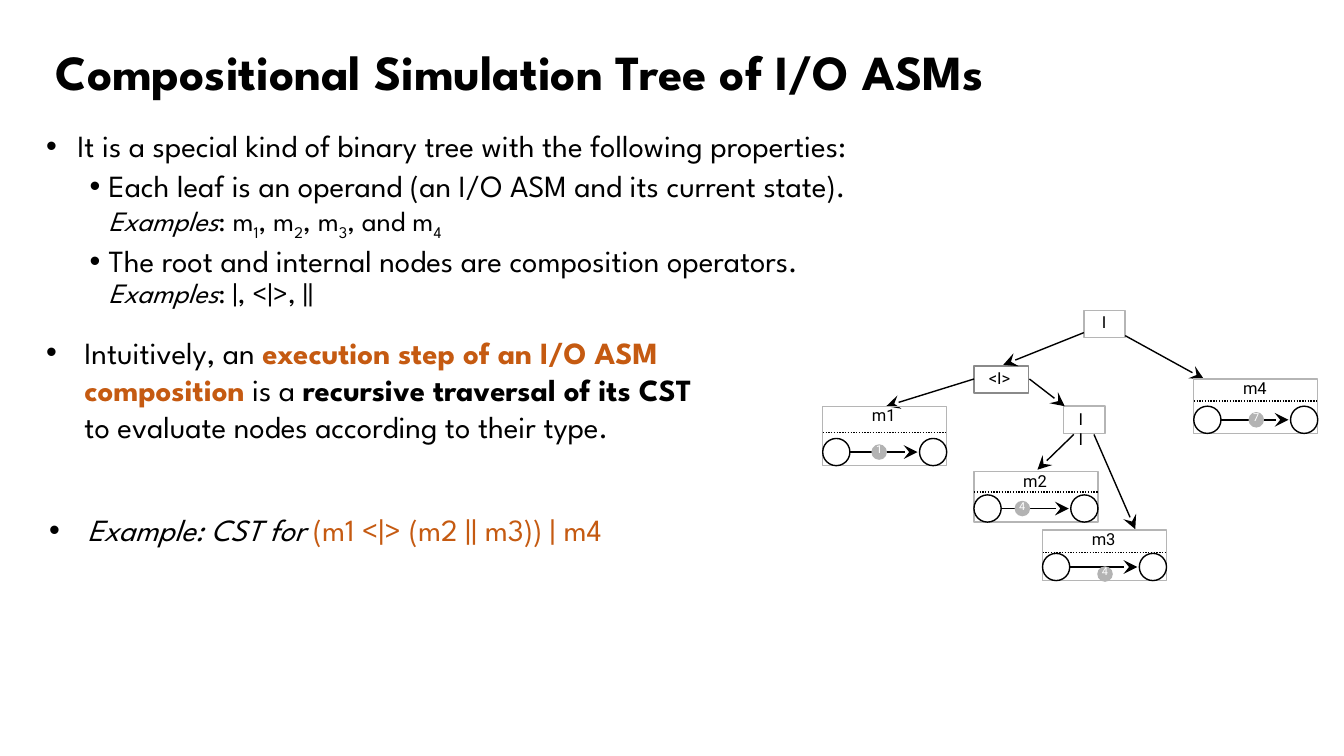
from lxml import etree
from pptx import Presentation
from pptx import util as u
from pptx.dml.color import RGBColor
from pptx.enum import dml, shapes, text
from pptx.oxml.ns import qn

COLORS = {"ink": "000000", "accent": "C55A11", "paper": "FFFFFF",
          "frame": "B5B5B5", "dark_frame": "8A8A8A", "badge": "B3B3B3"}

deck = Presentation()
deck.slide_width, deck.slide_height = u.Inches(13.33), u.Inches(7.5)
slide = deck.slides.add_slide(deck.slide_layouts[5])


def place_shape(preset, left, top, width, height, line, fill=None):
    shape = slide.shapes.add_shape(preset, *map(u.Inches, (left, top, width, height)))
    shape.shadow.inherit = False
    shape.line.color.rgb = RGBColor.from_string(COLORS[line])
    shape.line.width = u.Pt(1)
    if fill:
        shape.fill.solid()
        shape.fill.fore_color.rgb = RGBColor.from_string(COLORS[fill])
    else:
        shape.fill.background()


def draw_line(x1, y1, x2, y2, dotted=False):
    line = slide.shapes.add_connector(shapes.MSO_CONNECTOR.STRAIGHT,
                                      *map(u.Inches, (x1, y1, x2, y2)))
    line.line.color.rgb = RGBColor.from_string(COLORS["ink"])
    line.line.width = u.Pt(1)
    if dotted:
        line.line.dash_style = dml.MSO_LINE.ROUND_DOT
    else:
        etree.SubElement(line.line._get_or_add_ln(), qn("a:tailEnd"),
                         type="stealth", w="lg", len="lg")
    etree.SubElement(line._element.spPr, qn("a:effectLst"))


# Title
title = slide.shapes.title
title.left, title.top, title.width, title.height = map(u.Inches, (0.45, 0.43, 11.65, 1.09))
title.text_frame.text = "Compositional Simulation Tree of I/O ASMs"
title.text_frame.vertical_anchor = text.MSO_ANCHOR.TOP
heading = title.text_frame.paragraphs[0]
heading.alignment = text.PP_ALIGN.LEFT
heading.line_spacing = 0.9
heading.font.name, heading.font.size, heading.font.bold = "League Spartan", u.Pt(35), True
heading.font.color.rgb = RGBColor.from_string(COLORS["ink"])

# Bullet blocks: box, line spacing, paragraphs of (margin, indent, space before, runs)
# Run styles: i italic, b bold, a accent, s small, _ subscript
leaf_examples = [("Examples", "is"), (": m", "s"), ("1", "s_"), (", m", "s"), ("2", "s_"),
                 (", m", "s"), ("3", "s_"), (", and m", "s"), ("4", "s_")]
blocks = [
    ((0.36, 1.25, 11.96, 2.21), 0.9, [
        (0.31, -0.31, 0,
         [("It is a special kind of binary tree with the following properties:", "")]),
        (0.62, -0.19, 5,
         [("Each leaf is an operand (an I/O ASM and its current state).", ""), ("\n", "")]
         + leaf_examples),
        (0.62, -0.19, 5,
         [("The root and internal nodes are composition operators.", ""), ("\n", ""),
          ("Examples", "is"), (": |, <|>, ||", "s")])]),
    ((0.36, 3.26, 7.5, 1.21), 1.0, [
        (0.38, -0.38, 0,
         [("Intuitively, an ", ""), ("execution step of an I/O ASM composition", "ab"),
          (" is a ", ""), ("recursive traversal of its CST", "b"), ("\n", ""),
          ("to evaluate nodes according to their type.", "")])]),
    ((0.21, 5.02, 6.61, 0.47), 1.0, [
        (0.56, -0.38, 0,
         [("Example: CST for ", "i"), ("(m1 <|> (m2 || m3)) | m4", "a")])]),
]
for box, spacing, bullets in blocks:
    frame = slide.shapes.add_textbox(*map(u.Inches, box)).text_frame
    frame.word_wrap = True
    for number, (margin, indent, before, runs) in enumerate(bullets):
        bullet = frame.add_paragraph() if number else frame.paragraphs[0]
        props = bullet._p.get_or_add_pPr()
        props.set("marL", str(u.Inches(margin)))
        props.set("indent", str(u.Inches(indent)))
        etree.SubElement(props, qn("a:buFont"), typeface="Arial")
        etree.SubElement(props, qn("a:buChar"), char="•")
        bullet.line_spacing = spacing
        bullet.space_before = u.Pt(before)
        for words, style in runs:
            if words == "\n":
                bullet.add_line_break()
                continue
            run = bullet.add_run()
            run.text = words
            run.font.name = "League Spartan"
            run.font.size = u.Pt(20 if "s" in style else 22)
            run.font.bold, run.font.italic = "b" in style, "i" in style
            run.font.color.rgb = RGBColor.from_string(COLORS["accent" if "a" in style else "ink"])
            if "_" in style:
                run.font._element.set("baseline", "-25000")

# Operator nodes and edges
for left, top, width, frame_color in [(10.75, 3.08, 0.41, "frame"),
                                      (9.66, 3.63, 0.54, "dark_frame"),
                                      (10.55, 4.03, 0.41, "frame")]:
    place_shape(shapes.MSO_SHAPE.RECTANGLE, left, top, width, 0.27, frame_color)
for edge in [(10.75, 3.3, 9.95, 3.62), (11.16, 3.33, 11.94, 3.76),
             (9.66, 3.76, 8.79, 4.03), (10.21, 3.76, 10.56, 4.03),
             (10.65, 4.31, 10.29, 4.66), (10.85, 4.31, 11.26, 5.25)]:
    draw_line(*edge)
labels = [("I", 10.83, 3.05, 0.24, 11.8, "ink"), ("<I>", 9.71, 3.6, 0.43, 11.8, "ink"),
          ("II", 10.6, 4.01, 0.28, 11.8, "ink")]

# Leaf machines: name, left, top, height, divider above bottom, badge text, x and y offset
machines = [("m1", 8.16, 4.03, 0.59, 0.33, "1", 0.56, 0),
            ("m2", 9.66, 4.68, 0.5, 0.3, "4", 0.48, 0),
            ("m3", 10.34, 5.26, 0.5, 0.28, "4", 0.62, 0.07),
            ("m4", 11.84, 3.76, 0.54, 0.32, "7", 0.62, 0)]
LEAF_WIDTH, STATE, BADGE = 1.23, 0.27, 0.14
for name, left, top, height, divider, step, shift, drop in machines:
    bottom = top + height
    middle = bottom - STATE / 2
    place_shape(shapes.MSO_SHAPE.RECTANGLE, left, top, LEAF_WIDTH, height, "frame")
    draw_line(left, bottom - divider, left + LEAF_WIDTH, bottom - divider, dotted=True)
    draw_line(left + STATE, middle, left + LEAF_WIDTH - STATE - 0.02, middle)
    for state_left in (left, left + LEAF_WIDTH - STATE):
        place_shape(shapes.MSO_SHAPE.OVAL, state_left, bottom - STATE, STATE, STATE,
                    "ink", "paper")
    place_shape(shapes.MSO_SHAPE.OVAL, left + shift - BADGE / 2, middle + drop - BADGE / 2,
                BADGE, BADGE, "badge", "badge")
    labels += [(name, left + 0.39, top - 0.06, 0.45, 11.8, "ink"),
               (step, left + shift - 0.13, middle + drop - 0.14, 0.25, 7.8, "paper")]

# Labels of nodes, machines and steps; the parallel operator stacks its two bars
for words, left, top, width, size, color in labels:
    label = slide.shapes.add_textbox(*map(u.Inches, (left, top, width, 0.3 if size > 8 else 0.24)))
    label.text_frame.word_wrap = words == "II"
    label.text_frame.text = words
    font = label.text_frame.paragraphs[0].runs[0].font
    font.name, font.size = "Roboto", u.Pt(size)
    font.color.rgb = RGBColor.from_string(COLORS[color])

deck.save("out.pptx")
